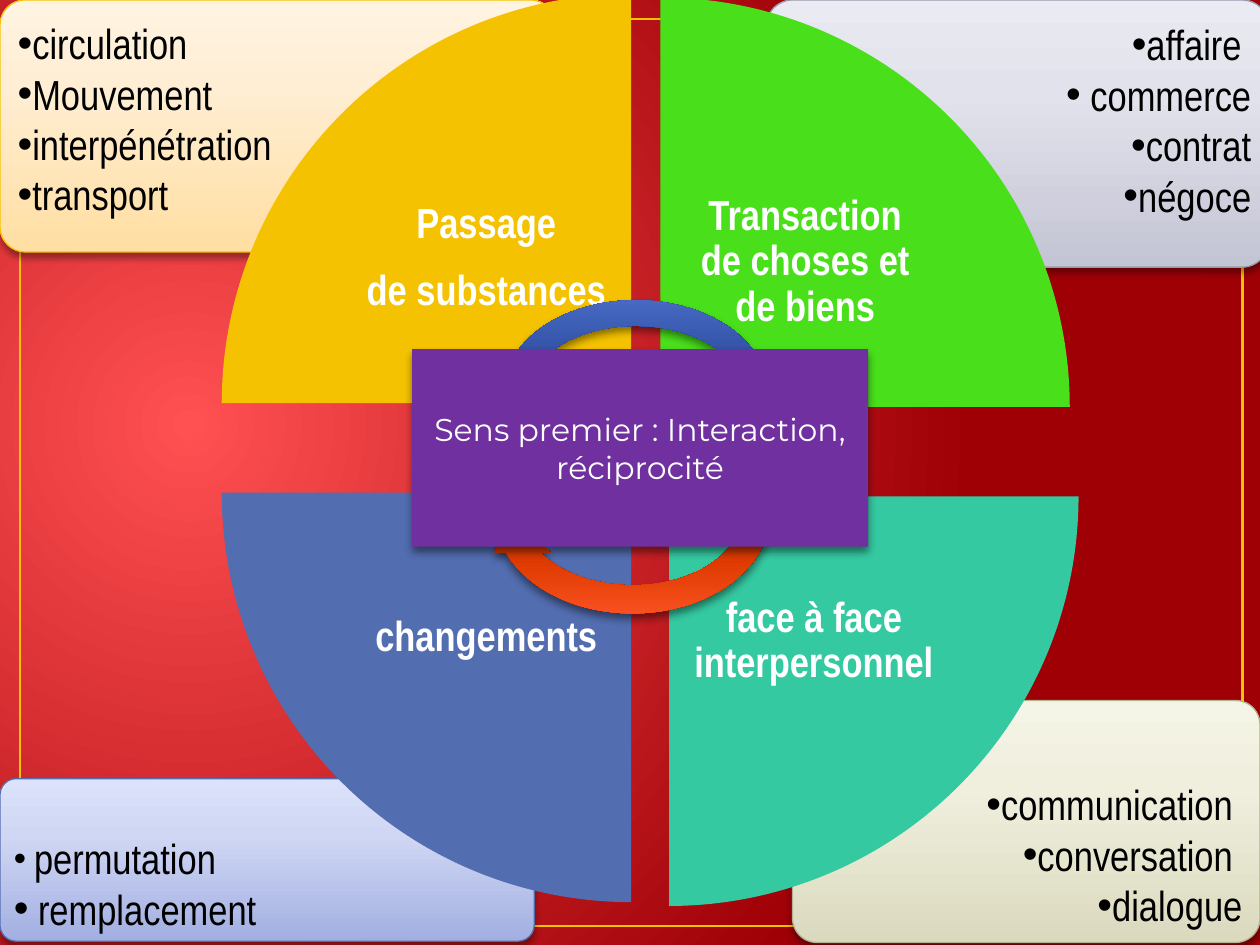
"""Build a four-quarter slide on the meanings of exchange."""
from dataclasses import dataclass

from lxml import etree
from pptx import Presentation
from pptx.dml.color import RGBColor
from pptx.enum import shapes, text
from pptx.oxml import ns
from pptx.util import Inches, Pt

Kind = shapes.MSO_SHAPE
Align = text.PP_ALIGN
Box = tuple[float, float, float, float]
Run = tuple[str, str, int]
NARROW = "Arial Narrow"
SIDE = 3.25
INNER = 2.3

HEX = {
    "gold": "F5C201", "green": "49DF1B", "teal": "35C9A2", "blue": "526DB0",
    "sage": "B4B392", "grey": "989AAC", "plum": "7030A0",
    "black": "000000", "white": "FFFFFF",
}
RED = [(0, "FF5052"), (100, "9E0006")]
NAVY = [(0, "13295E"), (50, "234394"), (70, "3354A7"), (100, "4D6FCB")]
RUST = [(0, "702000"), (50, "B53400"), (70, "DE3A00"), (100, "FF5627")]


@dataclass
class Card:
    box: Box
    shades: tuple[str, str, str]
    edge: str
    area: Box
    inset: float
    align: Align
    lines: list[list[Run]]


@dataclass
class Wedge:
    left: float
    top: float
    turn: int
    fill: str
    lines: list[str]


@dataclass
class Arrow:
    box: Box
    turn: int
    stops: list


def plain(*words: str) -> list[list[Run]]:
    return [[(word, NARROW, 24)] for word in words]


CARDS = [
    Card((6.29, 5.56, 3.71, 1.92), ("DBDABF", "F0EFDE", "F5F5E7"), "sage",
         (7.45, 6.08, 2.51, 1.35), 0.1, Align.RIGHT,
         plain("communication\u00a0", "conversation\u00a0", "dialogue")),
    Card((0, 6.18, 4.24, 1.29), ("A2AFE1", "D0D7F4", "DCE2FA"), "blue",
         (0.03, 6.53, 2.91, 0.91), 0.08, Align.LEFT,
         [[("\u00a0", "Calibri", 20), ("permutation", NARROW, 24)],
          [(" remplacement\u00a0", NARROW, 24)]]),
    Card((6.08, 0, 3.99, 2.12), ("C4C5D4", "E2E2EC", "EAEAF2"), "grey",
         (7.33, 0.05, 2.7, 1.5), 0.1, Align.RIGHT,
         plain("affaire\u00a0", " commerce", "contrat", "négoce")),
    Card((0, 0, 4.41, 2), ("FFDEA1", "FFEED4", "FFF3E1"), "gold",
         (0.04, 0.04, 3, 1.41), 0.1, Align.LEFT,
         plain("circulation", "Mouvement", "interpénétration", "transport")),
]
WEDGES = [
    Wedge(1.76, -0.05, 0, "gold", ["Passage", "de substances"]),
    Wedge(5.24, -0.02, 90, "green", ["Transaction de choses et de biens"]),
    Wedge(5.31, 3.94, 180, "teal", ["face à face interpersonnel"]),
    Wedge(1.76, 3.91, 270, "blue", ["changements"]),
]
ARROWS = [
    Arrow((3.9, 2.28, 2.29, 1.64), 0, NAVY),
    Arrow((3.82, 3.19, 2.4, 1.79), 180, RUST),
]


def tint(name: str) -> RGBColor:
    return RGBColor.from_string(HEX[name])


def node(host, tag: str, **attrs):
    return etree.SubElement(host, ns.qn(tag), {k: str(v) for k, v in attrs.items()})


def blend(host, stops: list):
    """Replace the stops of the host's gradient and return its element."""
    grad = host.find(".//" + ns.qn("a:gradFill"))
    for child in list(grad):
        grad.remove(child)
    group = node(grad, "a:gsLst")
    for spot, shade in stops:
        node(node(group, "a:gs", pos=spot * 1000), "a:srgbClr", val=shade)
    return grad


def ramp(shape, stops: list) -> None:
    shape.fill.gradient()
    grad = blend(shape._element.spPr, stops)
    node(grad, "a:lin", ang=270 * 60000, scaled=0)


def shade(shape, alpha: int, blur: int) -> None:
    shape.shadow.inherit = False
    group = shape._element.spPr.find(ns.qn("a:effectLst"))
    cast = node(group, "a:outerShdw", blurRad=Pt(blur), dist=Pt(3),
                dir=90 * 60000, rotWithShape=0)
    ink = node(cast, "a:srgbClr", val=HEX["black"])
    node(ink, "a:alpha", val=alpha * 1000)


def place(shape, box: Box) -> None:
    shape.left, shape.top, shape.width, shape.height = map(Inches, box)


def draw(slide, kind: Kind, box: Box, turn: int = 0):
    shape = slide.shapes.add_shape(kind, *map(Inches, box))
    shape.rotation = turn
    shape.shadow.inherit = False
    shape.line.fill.background()
    return shape


def edge(shape, name: str, width: float) -> None:
    shape.line.color.rgb = tint(name)
    shape.line.width = Pt(width)


def setup(frame, inset: float, anchor) -> None:
    frame.word_wrap = True
    frame.auto_size = text.MSO_AUTO_SIZE.NONE
    frame.vertical_anchor = anchor
    frame.margin_left = frame.margin_right = Inches(inset)
    frame.margin_top = frame.margin_bottom = Inches(inset)


def write(frame, lines: list[list[Run]], align: Align, ink: str, bold: bool) -> None:
    for i, runs in enumerate(lines):
        para = frame.add_paragraph() if i else frame.paragraphs[0]
        para.alignment = align
        para.space_before = Pt(0)
        for words, face, size in runs:
            run = para.add_run()
            run.text = words
            run.font.name, run.font.size, run.font.bold = face, Pt(size), bold
            run.font.color.rgb = tint(ink)


def card(slide, item: Card, body) -> None:
    back = draw(slide, Kind.ROUNDED_RECTANGLE, item.box)
    back.adjustments[0] = 0.1
    ramp(back, list(zip((0, 65, 100), item.shades)))
    edge(back, item.edge, 0.75)
    shade(back, 35, 4)
    place(body, item.area)
    slide.shapes._spTree.append(body._element)
    frame = body.text_frame
    setup(frame, item.inset, text.MSO_ANCHOR.TOP)
    write(frame, item.lines, item.align, "black", False)
    for para in frame.paragraphs:
        props = para._p.get_or_add_pPr()
        props.set("marL", "0")
        props.set("indent", "0")
        node(props, "a:buChar", char="•")


def wedge(slide, item: Wedge) -> None:
    box = (item.left, item.top, SIDE, SIDE)
    part = draw(slide, Kind.PIE_WEDGE, box, item.turn)
    part.fill.solid()
    part.fill.fore_color.rgb = tint(item.fill)
    gap = SIDE - INNER
    left = item.left + (gap if item.turn in (0, 270) else 0)
    top = item.top + (gap if item.turn in (0, 90) else 0)
    label = slide.shapes.add_textbox(*map(Inches, (left, top, INNER, INNER)))
    frame = label.text_frame
    setup(frame, 0.19, text.MSO_ANCHOR.MIDDLE)
    write(frame, plain(*item.lines), Align.CENTER, "white", True)
    for para in frame.paragraphs:
        para.line_spacing = 0.9
        para.space_after = Pt(12)


def main() -> None:
    deck = Presentation()
    deck.slide_width, deck.slide_height = Inches(10), Inches(7.5)
    slide = deck.slides.add_slide(deck.slide_layouts[4])
    title, *lists = list(slide.placeholders)[:5]
    slide.background.fill.gradient()
    path = node(blend(slide._element, RED), "a:path", path="circle")
    node(path, "a:fillToRect", l=15000, t=50000, r=85000, b=60000)
    border = draw(slide, Kind.RECTANGLE, (0.16, 0.15, 9.7, 7.2))
    border.fill.background()
    edge(border, "gold", 1.5)
    for item, body in zip(CARDS, lists):
        card(slide, item, body)
    for item in WEDGES:
        wedge(slide, item)
    for item in ARROWS:
        arrow = draw(slide, Kind.CIRCULAR_ARROW, item.box, item.turn)
        ramp(arrow, item.stops)
        shade(arrow, 45, 5)
    place(title, (3.27, 3.2, 3.62, 0.71))
    title.fill.solid()
    title.fill.fore_color.rgb = tint("plum")
    shade(title, 45, 5)
    slide.shapes._spTree.append(title._element)
    title.text_frame.auto_size = text.MSO_AUTO_SIZE.SHAPE_TO_FIT_TEXT
    words = "Sens premier : Interaction, réciprocité"
    write(title.text_frame, [[(words, "Montserrat", 18)]], Align.CENTER, "white", False)
    deck.save("out.pptx")


if __name__ == "__main__":
    main()
